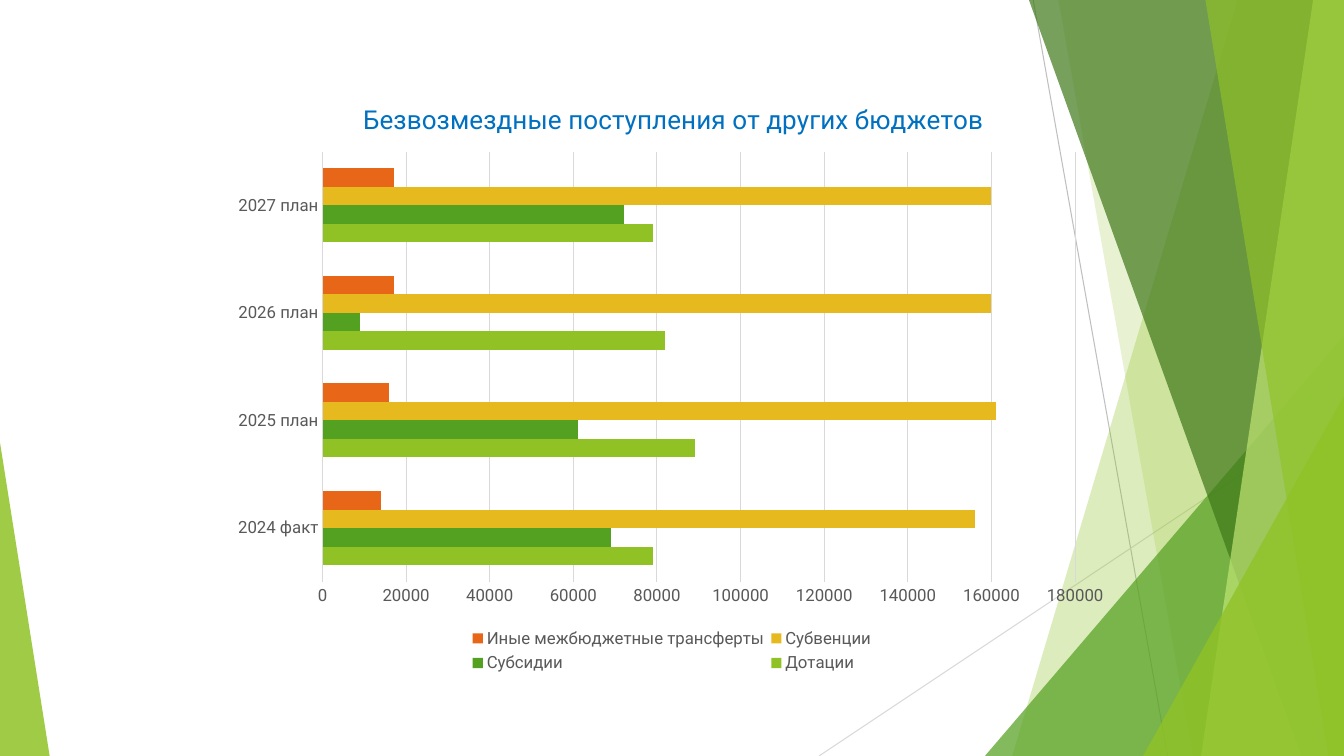
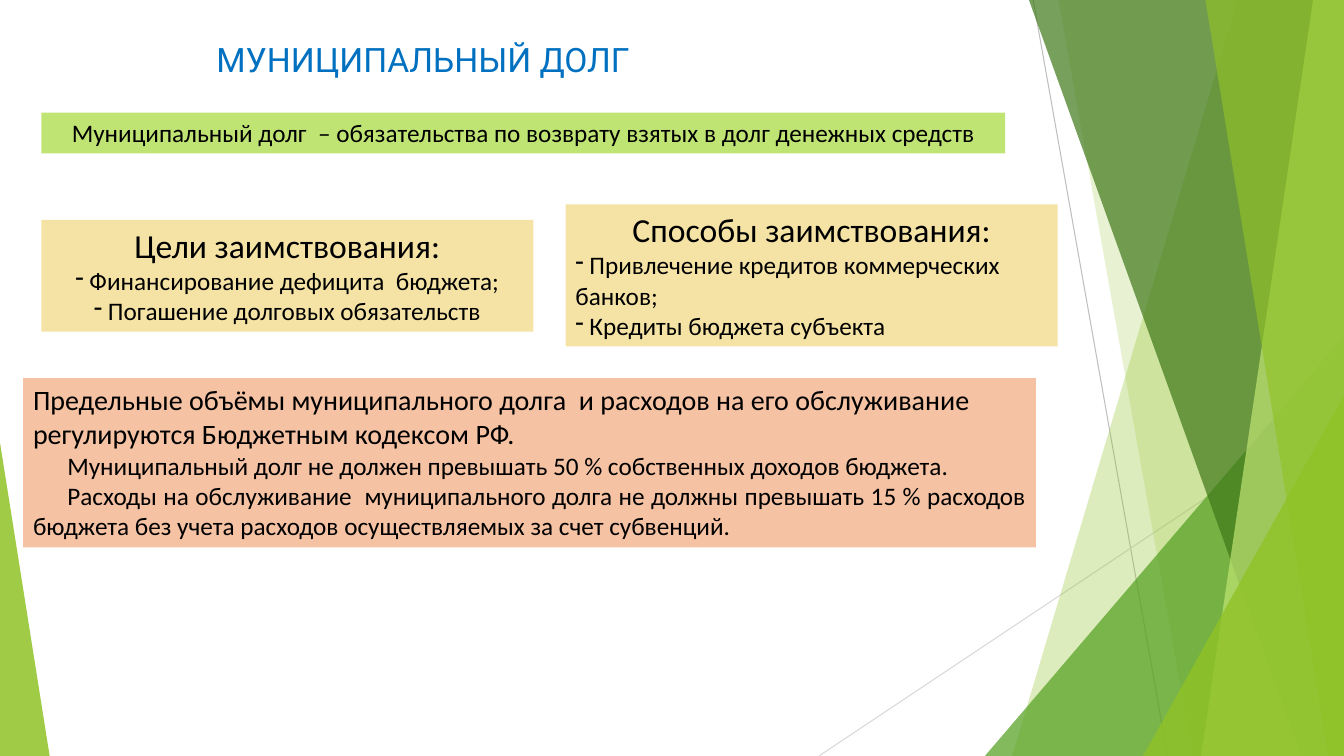
from dataclasses import dataclass

from lxml import etree
from pptx import Presentation
from pptx.chart.data import CategoryChartData
from pptx.dml.color import RGBColor
from pptx.enum.chart import XL_CHART_TYPE, XL_LEGEND_POSITION, XL_TICK_MARK
from pptx.enum.shapes import MSO_CONNECTOR, MSO_SHAPE
from pptx.enum.text import MSO_ANCHOR, PP_ALIGN
from pptx.oxml.ns import qn
from pptx.util import Pt

LEFT, CENTER, JUSTIFY = PP_ALIGN.LEFT, PP_ALIGN.CENTER, PP_ALIGN.JUSTIFY
NO_TICK = XL_TICK_MARK.NONE
WIDTH, HEIGHT = 960, 540
HEADING_FONT, BODY_FONT = "Roboto", "Calibri"
COLORS = {
    "lime": "90C226", "green": "54A021", "forest": "3F7819", "pale": "C0E474",
    "yellow": "E6B91E", "orange": "E76618", "cream": "F5E3A5", "peach": "F5C2A3",
    "title": "0070C0", "text": "000000", "label": "595959",
    "line": "BFBFBF", "grid": "D9D9D9",
}


@dataclass
class Ray:
    start: tuple[float, float]
    end: tuple[float, float]
    color: str


@dataclass
class Panel:
    """A band from the slanted left edge to the right side of the slide."""
    top_x: float
    bottom_x: float
    color: str
    opacity: int


@dataclass
class Wedge:
    left: float
    top: float
    width: float
    apex: float
    color: str
    opacity: int


@dataclass
class Line:
    text: str
    size: float = 18
    align: PP_ALIGN = LEFT
    bullet: bool = False
    indent: float = 0


@dataclass
class Box:
    left: float
    top: float
    width: float
    height: float
    color: str
    lines: list[Line]


@dataclass
class Series:
    name: str
    values: tuple[int, ...]
    color: str


# Shared background, from back to front
RAYS = [
    Ray((738, 0), (834, HEIGHT), "line"),
    Ray((WIDTH, 290), (585, HEIGHT), "grid"),
]
FACETS = [
    Panel(884, 723, "lime", 30),
    Panel(756, 852, "lime", 20),
    Wedge(703.5, 240, 256.5, 1, "green", 72),
    Panel(735, 929.5, "forest", 70),
    Panel(938, 858, "pale", 70),
    Panel(861, 949, "lime", 65),
    Wedge(816.5, 283, 143.5, 1, "lime", 80),
    Wedge(0, 316, 35.5, 0, "lime", 85),
]

CHART_TITLE = "Безвозмездные поступления от других бюджетов"
YEARS = ["2024 факт", "2025 план", "2026 план", "2027 план"]
SERIES = [
    Series("Дотации", (79000, 89000, 82000, 79000), "lime"),
    Series("Субсидии", (69000, 61000, 9000, 72000), "green"),
    Series("Субвенции", (156000, 161000, 160000, 160000), "yellow"),
    Series("Иные межбюджетные трансферты", (14000, 16000, 17000, 17000), "orange"),
]

DEBT_TITLE = "МУНИЦИПАЛЬНЫЙ ДОЛГ"
DEBT_BOXES = [
    Box(29.5, 80.5, 688.5, 29, "pale", [
        Line("Муниципальный долг  – обязательства по возврату взятых в долг "
             "денежных средств", align=CENTER),
    ]),
    Box(29.5, 157, 351.5, 80, "cream", [
        Line("Цели заимствования:", 24, CENTER),
        Line(" Финансирование дефицита  бюджета;", align=CENTER, bullet=True),
        Line(" Погашение долговых обязательств", align=CENTER, bullet=True),
    ]),
    Box(404, 146, 351.5, 101.5, "cream", [
        Line("Способы заимствования:", 24, CENTER),
        Line(" Привлечение кредитов коммерческих банков;", bullet=True),
        Line(" Кредиты бюджета субъекта", bullet=True),
    ]),
    Box(16.5, 270, 723.5, 121, "peach", [
        Line("Предельные объёмы муниципального долга  и расходов на его "
             "обслуживание регулируются Бюджетным кодексом РФ.", 20),
        Line("Муниципальный долг не должен превышать 50 % собственных доходов "
             "бюджета.", align=JUSTIFY, indent=24.5),
        Line("Расходы на обслуживание  муниципального долга не должны превышать "
             "15 % расходов бюджета без учета расходов осуществляемых за счет "
             "субвенций.", align=JUSTIFY, indent=24.5),
    ]),
]


def rgb(name: str) -> RGBColor:
    return RGBColor.from_string(COLORS[name])


def set_font(font, name: str, size: float, color: str) -> None:
    font.name = name
    font.size = Pt(size)
    font.color.rgb = rgb(color)


def paint(shape, color: str, opacity: int = 100) -> None:
    shape.shadow.inherit = False
    shape.fill.solid()
    shape.fill.fore_color.rgb = rgb(color)
    shape.line.fill.background()
    if opacity < 100:
        fill = shape.fill._xPr.find(qn("a:solidFill"))
        etree.SubElement(fill[0], qn("a:alpha"), val=str(opacity * 1000))


def draw_ray(slide, ray: Ray) -> None:
    points = [Pt(value) for value in (*ray.start, *ray.end)]
    connector = slide.shapes.add_connector(MSO_CONNECTOR.STRAIGHT, *points)
    connector.line.color.rgb = rgb(ray.color)
    connector.line.width = Pt(0.75)
    etree.SubElement(connector.element.spPr, qn("a:effectLst"))


def draw_facet(slide, facet: Panel | Wedge) -> None:
    if isinstance(facet, Panel):
        builder = slide.shapes.build_freeform(Pt(facet.top_x), Pt(0))
        corners = [(WIDTH, 0), (WIDTH, HEIGHT), (facet.bottom_x, HEIGHT)]
        builder.add_line_segments([(Pt(x), Pt(y)) for x, y in corners])
        shape = builder.convert_to_shape()
    else:
        shape = slide.shapes.add_shape(
            MSO_SHAPE.ISOSCELES_TRIANGLE, Pt(facet.left), Pt(facet.top),
            Pt(facet.width), Pt(HEIGHT - facet.top))
        shape.adjustments[0] = facet.apex
    paint(shape, facet.color, facet.opacity)


def new_slide(presentation):
    slide = presentation.slides.add_slide(presentation.slide_layouts[6])
    for ray in RAYS:
        draw_ray(slide, ray)
    for facet in FACETS:
        draw_facet(slide, facet)
    return slide


def draw_box(slide, box: Box) -> None:
    shape = slide.shapes.add_shape(
        MSO_SHAPE.RECTANGLE, Pt(box.left), Pt(box.top), Pt(box.width), Pt(box.height))
    paint(shape, box.color)
    frame = shape.text_frame
    frame.word_wrap = True
    frame.vertical_anchor = MSO_ANCHOR.TOP
    for index, line in enumerate(box.lines):
        paragraph = frame.add_paragraph() if index else frame.paragraphs[0]
        paragraph.text = line.text
        paragraph.alignment = line.align
        properties = paragraph._p.get_or_add_pPr()
        properties.set("marL", "0")
        properties.set("indent", str(Pt(line.indent)))
        if line.bullet:
            etree.SubElement(properties, qn("a:buChar"), char="-")
        set_font(paragraph.font, BODY_FONT, line.size, "text")


def draw_title(slide, text: str) -> None:
    frame = slide.shapes.add_textbox(Pt(147.5), Pt(24), Pt(480), Pt(36)).text_frame
    frame.word_wrap = True
    paragraph = frame.paragraphs[0]
    paragraph.text = text
    set_font(paragraph.font, HEADING_FONT, 24, "title")


def place(element, index: int, inner: bool = False, **fractions: float) -> None:
    """Give a chart part a fixed place, in fractions of the chart."""
    for old in element.findall(qn("c:layout")):
        element.remove(old)
    layout = etree.Element(qn("c:layout"))
    manual = etree.SubElement(layout, qn("c:manualLayout"))
    if inner:
        etree.SubElement(manual, qn("c:layoutTarget"), val="inner")
    for mode in ("xMode", "yMode"):
        etree.SubElement(manual, qn(f"c:{mode}"), val="edge")
    for key, value in fractions.items():
        etree.SubElement(manual, qn(f"c:{key}"), val=str(value))
    element.insert(index, layout)


def no_fill():
    properties = etree.Element(qn("c:spPr"))
    etree.SubElement(properties, qn("a:noFill"))
    line = etree.SubElement(properties, qn("a:ln"))
    etree.SubElement(line, qn("a:noFill"))
    return properties


def draw_chart(slide) -> None:
    data = CategoryChartData(number_format="General")
    data.categories = YEARS
    for series in SERIES:
        data.add_series(series.name, series.values)
    chart = slide.shapes.add_chart(
        XL_CHART_TYPE.BAR_CLUSTERED, Pt(160), Pt(57), Pt(640), Pt(427), data).chart
    set_font(chart.font, HEADING_FONT, 10, "text")

    # Title and legend
    chart.has_title = True
    paragraph = chart.chart_title.text_frame.paragraphs[0]
    paragraph.text = CHART_TITLE
    set_font(paragraph.font, HEADING_FONT, 18.6, "title")
    paragraph.font.bold = False
    chart.has_legend = True
    chart.legend.position = XL_LEGEND_POSITION.BOTTOM
    chart.legend.include_in_layout = False
    set_font(chart.legend.font, HEADING_FONT, 12, "label")

    # Bars
    plot = chart.plots[0]
    plot.gap_width = 182
    plot.overlap = 0
    plot.vary_by_categories = False
    for bars, series in zip(plot.series, SERIES):
        bars.format.fill.solid()
        bars.format.fill.fore_color.rgb = rgb(series.color)

    # Axes
    category_axis, value_axis = chart.category_axis, chart.value_axis
    for axis in (category_axis, value_axis):
        axis.major_tick_mark = axis.minor_tick_mark = NO_TICK
        set_font(axis.tick_labels.font, HEADING_FONT, 12, "label")
    value_axis.minimum_scale, value_axis.maximum_scale = 0, 180000
    value_axis.major_unit = 20000
    value_axis.has_major_gridlines = True
    value_axis.format.line.fill.background()
    for line in (category_axis.format.line, value_axis.major_gridlines.format.line):
        line.color.rgb = rgb("grid")
        line.width = Pt(0.75)

    # Places of the parts, clear background
    body = chart.element.find(qn("c:chart"))
    plot_area = body.find(qn("c:plotArea"))
    place(body.find(qn("c:title")), 1, x=0.15, y=0.03)
    place(plot_area, 0, inner=True, x=0.11, y=0.12, w=0.84, h=0.72)
    place(body.find(qn("c:legend")), 1, x=0.27, y=0.91, w=0.46, h=0.09)
    plot_area.append(no_fill())
    body.addnext(no_fill())


def main() -> None:
    presentation = Presentation()
    presentation.slide_width, presentation.slide_height = Pt(WIDTH), Pt(HEIGHT)

    draw_chart(new_slide(presentation))

    debt_slide = new_slide(presentation)
    draw_title(debt_slide, DEBT_TITLE)
    for box in DEBT_BOXES:
        draw_box(debt_slide, box)

    presentation.save("out.pptx")


if __name__ == "__main__":
    main()
